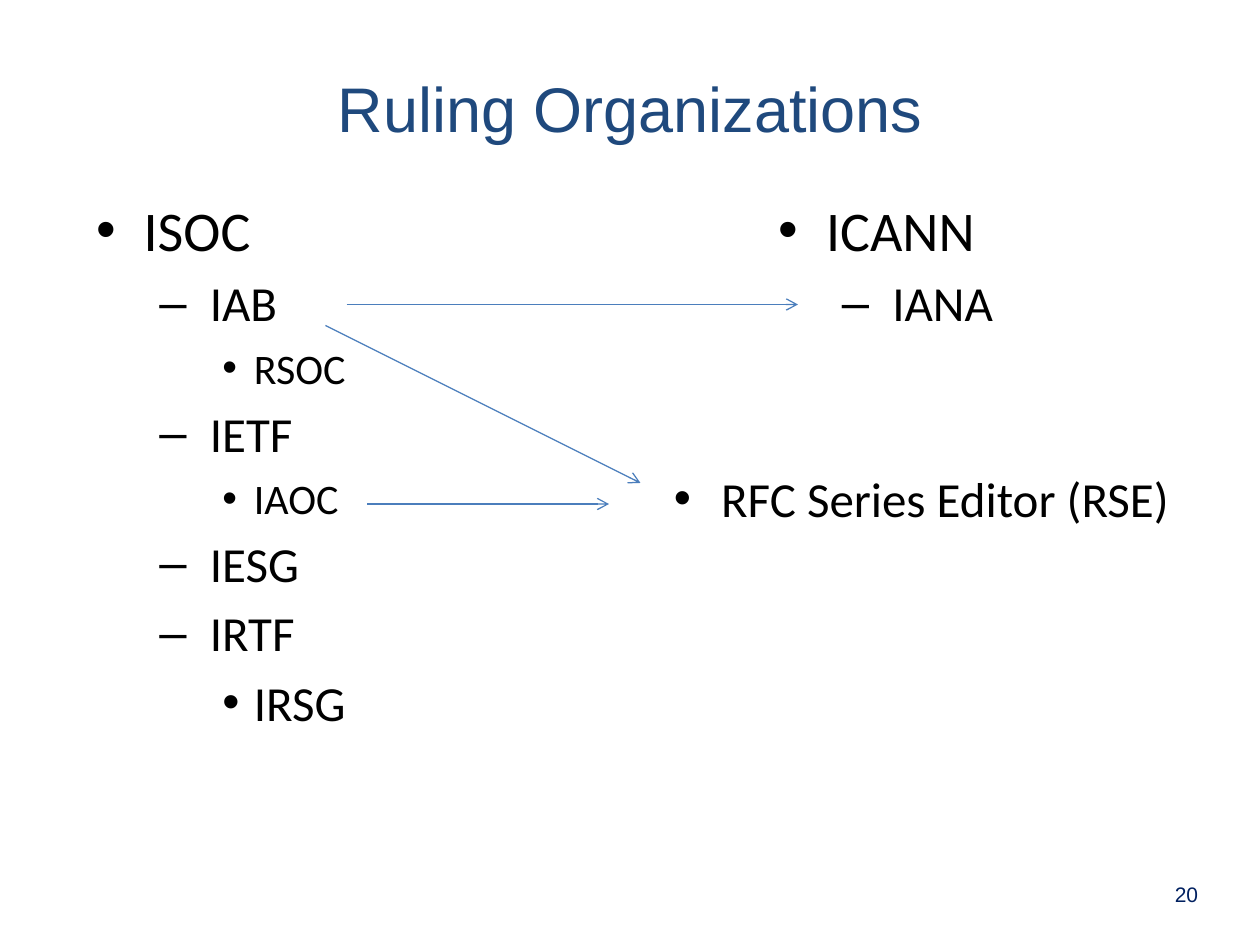
from dataclasses import dataclass

from lxml import etree
from pptx import Presentation
from pptx import util as u
from pptx.dml import color
from pptx.enum import shapes, text
from pptx.oxml import ns

PX = 9525


@dataclass(frozen=True)
class Theme:
    """Fonts, colours, type sizes and bullet levels of the page."""

    heading_font: str = "Arial"
    body_font: str = "Calibri"
    heading: str = "1F497D"
    body: str = "000000"
    number: str = "002060"
    arrow: str = "4B7EBC"
    heading_size: int = 36
    number_size: int = 12
    level_sizes: tuple = (32, 28, 24)
    arrow_width: float = 0.75
    space_before: int = 6
    levels: tuple = ((36, 36, "•"), (78, 30, "–"), (120, 24, "•"))


class PageBuilder:
    """Draws styled elements on the current page."""

    def __init__(self, page, theme):
        """Keep the page and its theme."""
        self.page = page
        self.theme = theme

    def box(self, left, top, width, height, anchor=text.MSO_ANCHOR.TOP):
        """Add a wrapping text box and return its frame."""
        box = self.page.shapes.add_textbox(*(u.Emu(n * PX) for n in (left, top, width, height)))
        frame = box.text_frame
        frame.word_wrap = True
        frame.vertical_anchor = anchor
        return frame

    def style(self, para, font, size, rgb):
        """Format every run of a paragraph."""
        for span in para.runs:
            span.font.name = font
            span.font.size = u.Pt(size)
            span.font.color.rgb = color.RGBColor.from_string(rgb)

    def label(self, wording, bounds, size, rgb, anchor=text.MSO_ANCHOR.TOP):
        """Add one centred line in the heading font."""
        frame = self.box(*bounds, anchor)
        frame.text = wording
        para = frame.paragraphs[0]
        para.alignment = text.PP_ALIGN.CENTER
        self.style(para, self.theme.heading_font, size, rgb)

    def bullets(self, items, bounds):
        """Add a list of (level, wording, size) items."""
        frame = self.box(*bounds)
        frame.text = "\n".join(wording for _, wording, _ in items)
        for para, (level, _, size) in zip(frame.paragraphs, items):
            self.style(para, self.theme.body_font, size, self.theme.body)
            para.level = level
            para.space_before = u.Pt(self.theme.space_before)
            margin, hanging, mark = self.theme.levels[level]
            props = para._p.get_or_add_pPr()
            props.set("marL", str(margin * PX))
            props.set("indent", str(-hanging * PX))
            etree.SubElement(props, ns.qn("a:buFont"), typeface=self.theme.heading_font)
            etree.SubElement(props, ns.qn("a:buChar"), char=mark)

    def arrow(self, *ends):
        """Add a straight line with an open arrowhead at its end."""
        link = self.page.shapes.add_connector(
            shapes.MSO_CONNECTOR.STRAIGHT, *(u.Emu(n * PX) for n in ends)
        )
        link.line.color.rgb = color.RGBColor.from_string(self.theme.arrow)
        link.line.width = u.Pt(self.theme.arrow_width)
        etree.SubElement(link.line._get_or_add_ln(), ns.qn("a:tailEnd"), type="arrow")
        etree.SubElement(link._element.spPr, ns.qn("a:effectLst"))


def main():
    """Build and save the deck."""
    deck = Presentation()
    deck.slide_width, deck.slide_height = u.Emu(960 * PX), u.Emu(720 * PX)
    theme = Theme()
    large, medium, small = theme.level_sizes
    builder = PageBuilder(deck.slides.add_slide(deck.slide_layouts[6]), theme)

    builder.label("20", (880, 656, 48, 50), theme.number_size, theme.number, text.MSO_ANCHOR.MIDDLE)
    society = [
        (0, "ISOC", large),
        (1, " IAB", medium),
        (2, "RSOC", small),
        (1, " IETF", medium),
        (2, "IAOC", small),
        (1, " IESG", medium),
        (1, " IRTF", medium),
        (2, "IRSG", medium),
    ]
    builder.bullets(society, (64, 144, 264, 496))
    builder.label("Ruling Organizations", (0, 48, 960, 68), theme.heading_size, theme.heading)
    builder.bullets([(0, "ICANN", large), (1, " IANA", medium)], (584, 144, 304, 176))
    builder.bullets([(0, "RFC Series Editor (RSE)", medium)], (504, 352, 400, 104))
    for ends in ((264, 232, 608, 232), (248, 248, 488, 368), (280, 384, 464, 384)):
        builder.arrow(*ends)

    deck.save("out.pptx")


if __name__ == "__main__":
    main()
